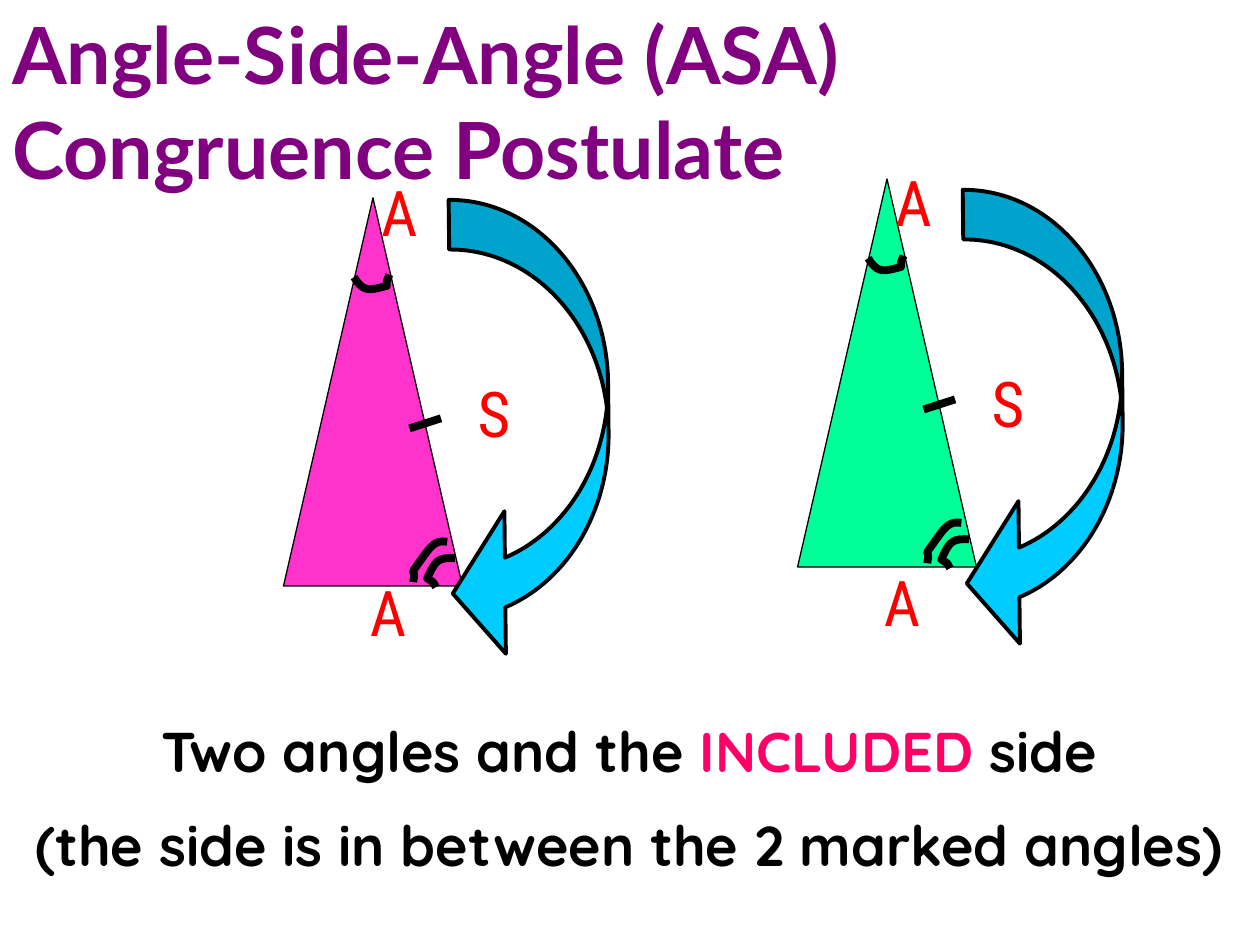
"""Build the Angle-Side-Angle congruence slide."""
import pptx
import pptx.dml.color
import pptx.enum.shapes
import pptx.enum.text
import pptx.util
from lxml import etree

Inches = pptx.util.Inches
Pt = pptx.util.Pt
RGB = pptx.dml.color.RGBColor.from_string
SHAPE = pptx.enum.shapes.MSO_SHAPE
ALIGN = pptx.enum.text.PP_ALIGN
AUTO = pptx.enum.text.MSO_AUTO_SIZE

THEME = {
    "title": ("Lato", 45, "800080"),
    "caption": ("Quicksand", 32, "000000"),
    "label": ("Roboto Condensed", 36, "FF0000"),
    "ink": "000000", "accent": "FF0066", "arrow": "00CCFF",
    "triangles": ["FF33CC", "00FF99"],
    "thin": 0.75, "medium": 2.25, "thick": 4.5,
}


def add_text(shapes, box, lines, style, bold=False, align=None, wrap=True):
    font, size, color = THEME[style]
    tf = shapes.add_textbox(*map(Inches, box)).text_frame
    tf.word_wrap = wrap
    tf.auto_size = AUTO.SHAPE_TO_FIT_TEXT if wrap else AUTO.NONE
    for i, line in enumerate(lines):
        p = tf.add_paragraph() if i else tf.paragraphs[0]
        p.alignment = align
        p.space_before = Pt(15 if i else 0)
        p.font.name, p.font.size, p.font.bold = font, Pt(size), bold
        p.font.color.rgb = RGB(color)
        for text, run_color in line:
            r = p.add_run()
            r.text = text
            if run_color:
                r.font.color.rgb = RGB(run_color)


def outline(sp, width, fill=None):
    sp.line.color.rgb = RGB(THEME["ink"])
    sp.line.width = Pt(width)
    if fill:
        sp.fill.solid()
        sp.fill.fore_color.rgb = RGB(fill)
    sp.shadow.inherit = False


prs = pptx.Presentation()
prs.slide_width, prs.slide_height = Inches(10), Inches(7.5)
s = prs.slides.add_slide(prs.slide_layouts[6])

add_text(s.shapes, (0, 0, 10, 1.6),
         [[("Angle-Side-Angle (ASA) Congruence Postulate", None)]], "title", bold=True)

angle_marks = [
    [(2.81, 2.2), (2.89, 2.33), (2.94, 2.3), (3.07, 2.27), (3.07, 2.21), (3.07, 2.24), (3.09, 2.18)],
    [(3.55, 4.3), (3.44, 4.28), (3.41, 4.35), (3.28, 4.53), (3.29, 4.58), (3.29, 4.55), (3.28, 4.62)],
    [(3.61, 4.43), (3.46, 4.42), (3.45, 4.47), (3.39, 4.59), (3.45, 4.63), (3.43, 4.61), (3.46, 4.66)],
]
STEPS = 10

for color, dx, dy in zip(THEME["triangles"], (0, 4.08), (0, -0.15)):
    shapes = s.shapes.add_group_shape().shapes
    sp = shapes.add_shape(SHAPE.ISOSCELES_TRIANGLE, Inches(2.25 + dx), Inches(1.57 + dy),
                          Inches(1.42), Inches(3.08))
    outline(sp, THEME["thin"], color)

    for mark in angle_marks:
        points = []
        for start in (0, 3):
            for step in range(1, STEPS + 1):
                t = step / STEPS
                weights = ((1 - t) ** 3, 3 * t * (1 - t) ** 2, 3 * t ** 2 * (1 - t), t ** 3)
                x, y = (sum(w * pt[axis] for w, pt in zip(weights, mark[start:start + 4]))
                        for axis in (0, 1))
                points.append((Inches(x + dx), Inches(y + dy)))
        builder = shapes.build_freeform(Inches(mark[0][0] + dx), Inches(mark[0][1] + dy))
        builder.add_line_segments(points, close=False)
        sp = builder.convert_to_shape()
        sp.fill.background()
        outline(sp, THEME["thick"])

    tick = shapes.add_connector(pptx.enum.shapes.MSO_CONNECTOR.STRAIGHT,
                                Inches(3.25 + dx), Inches(3.4 + dy),
                                Inches(3.5 + dx), Inches(3.32 + dy))
    tick.line.color.rgb = RGB(THEME["ink"])
    tick.line.width = Pt(THEME["thick"])
    etree.SubElement(tick._element.spPr, pptx.oxml.ns.qn("a:effectLst"))

add_text(s.shapes, (0.08, 5.64, 9.83, 1.45),
         [[("Two angles and the ", None), ("INCLUDED", THEME["accent"]), (" side", None)],
          [("(the side is in between the 2 marked angles)", None)]],
         "caption", bold=True, align=ALIGN.CENTER)

for dx, dy in ((0, 0), (4.08, -0.08)):
    shapes = s.shapes.add_group_shape().shapes
    sp = shapes.add_shape(SHAPE.CURVED_DOWN_ARROW, Inches(2.36 + dx), Inches(2.8 + dy),
                          Inches(3.69), Inches(1.25))
    sp.rotation = 89.4
    for i, value in enumerate((0.315, 0.905, 0.333)):
        sp.adjustments[i] = value
    outline(sp, THEME["medium"], THEME["arrow"])
    for letter, x, y in (("A", 2.92, 1.33), ("A", 2.83, 4.5), ("S", 3.67, 2.92)):
        add_text(shapes, (x + dx, y + dy, 0.5, 0.75), [[(letter, None)]], "label",
                 align=ALIGN.CENTER, wrap=False)

prs.save("out.pptx")
